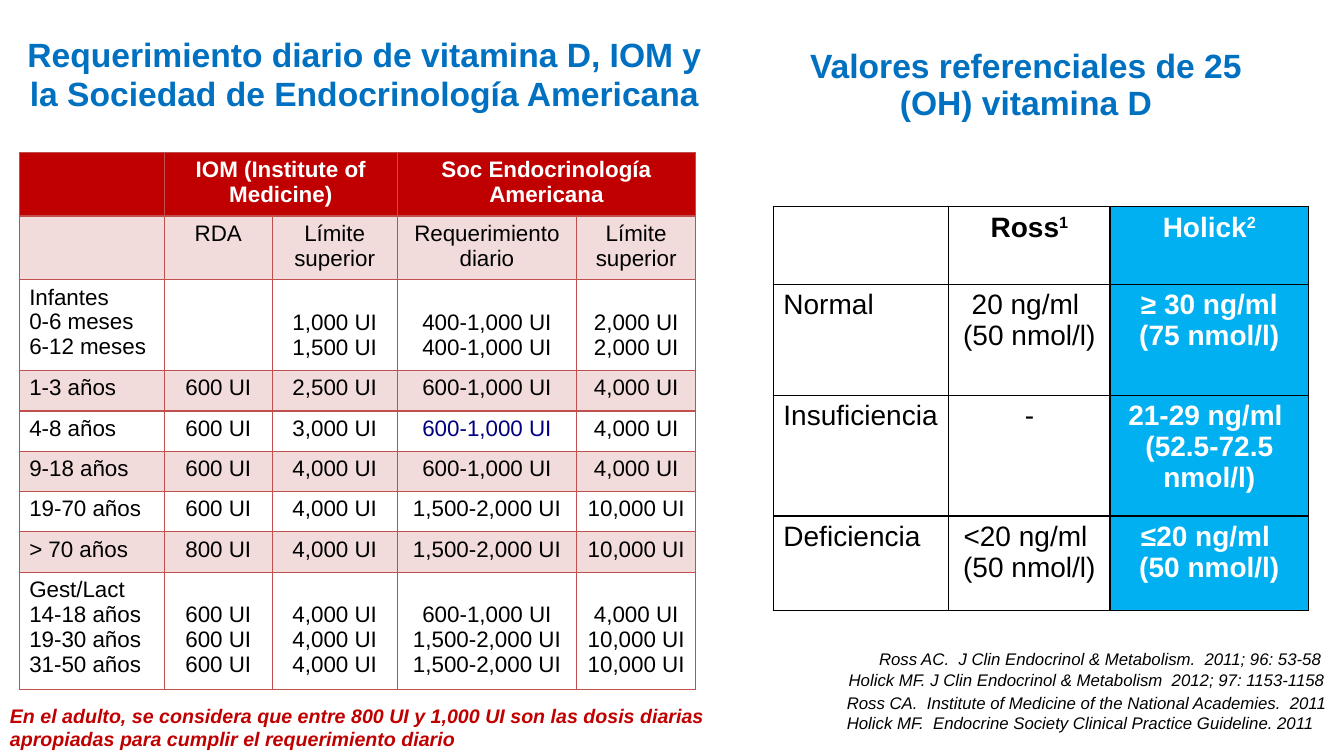
from dataclasses import dataclass
from pptx import Presentation
from pptx.dml.color import RGBColor as Rgb
from pptx.enum.text import MSO_ANCHOR as Anchor, MSO_AUTO_SIZE as Fit, PP_ALIGN as Align
from pptx.oxml import parse_xml
from pptx.oxml.ns import nsdecls
from pptx.util import Pt


@dataclass(frozen=True)
class Theme:
    font: str = "Arial"
    head: str = "0070C0"
    red: str = "C00000"
    rose: str = "C0504D"
    sky: str = "00B0F0"
    navy: str = "000080"
    ink: str = "000000"
    white: str = "FFFFFF"
    title: int = 24
    dose: int = 16
    level: int = 20
    note: int = 14
    cite: int = 12


look = Theme()
SCALE = 9144
BAND = 20

DOSE_COLS = [144, 107, 124, 178, 118]
DOSE_ROWS = [59, 63, 89, 40, 40, 40, 40, 40, 116]
DOSES = [
    ["", "IOM (Institute of Medicine)", "", "Soc Endocrinología Americana", ""],
    ["", "RDA", "Límite superior", "Requerimiento diario", "Límite superior"],
    ["Infantes\n0-6 meses\n6-12 meses", "", "1,000 UI\n1,500 UI",
     "400-1,000 UI\n400-1,000 UI", "2,000 UI\n2,000 UI"],
    ["1-3 años", "600 UI", "2,500 UI", "600-1,000 UI", "4,000 UI"],
    ["4-8 años", "600 UI", "3,000 UI", "600-1,000 UI", "4,000 UI"],
    ["9-18 años", "600 UI", "4,000 UI", "600-1,000 UI", "4,000 UI"],
    ["19-70 años", "600 UI", "4,000 UI", "1,500-2,000 UI", "10,000 UI"],
    ["> 70 años", "800 UI", "4,000 UI", "1,500-2,000 UI", "10,000 UI"],
    ["Gest/Lact\n14-18 años\n19-30 años\n31-50 años", "600 UI\n600 UI\n600 UI",
     "4,000 UI\n4,000 UI\n4,000 UI", "600-1,000 UI\n1,500-2,000 UI\n1,500-2,000 UI",
     "4,000 UI\n10,000 UI\n10,000 UI"],
]
LEVEL_COLS = [174, 160, 197]
LEVEL_ROWS = [77, 110, 120, 94]
LEVELS = [
    ["", "Ross^1", "Holick^2"],
    ["Normal", "20 ng/ml \n(50 nmol/l)", "≥ 30 ng/ml\n(75 nmol/l)"],
    ["Insuficiencia", "-", "21-29 ng/ml \n(52.5-72.5 nmol/l)"],
    ["Deficiencia", "<20 ng/ml \n(50 nmol/l)", "≤20 ng/ml \n(50 nmol/l)"],
]


def px(n):
    return n * SCALE


def write(frame, text, size, color=look.ink, bold=False, slant=False,
          align=Align.LEFT, lead=None):
    for i, line in enumerate(text.split("\n")):
        par = frame.add_paragraph() if i else frame.paragraphs[0]
        par.alignment = align
        if lead:
            par.line_spacing = Pt(lead)
        for j, part in enumerate(line.split("^")):
            run = par.add_run()
            run.text = part
            font = run.font
            font.name, font.size = look.font, Pt(size)
            font.bold, font.italic = bold, slant
            font.color.rgb = Rgb.from_string(color)
            if j:
                run._r.get_or_add_rPr().set("baseline", "30000")


def place(shape, box):
    shape.left, shape.top, shape.width, shape.height = map(px, box)


def label(slide, box, text, size, **form):
    shape = slide.shapes.add_textbox(*map(px, box))
    shape.text_frame.word_wrap = True
    shape.text_frame.auto_size = Fit.SHAPE_TO_FIT_TEXT
    write(shape.text_frame, text, size, **form)


def paint(cell, color, alpha=100):
    if not color:
        cell.fill.background()
        return
    cell.fill.solid()
    cell.fill.fore_color.rgb = Rgb.from_string(color)
    if alpha < 100:
        tone = cell._tc.tcPr.find(".//{*}srgbClr")
        tone.append(parse_xml(f'<a:alpha {nsdecls("a")} val="{alpha * 1000}"/>'))


def edge(cell, color, base=1):
    props = cell._tc.get_or_add_tcPr()
    widths = {"lnL": 1, "lnR": 1, "lnT": 1, "lnB": base}
    for i, (side, width) in enumerate(widths.items()):
        props.insert(i, parse_xml(
            f'<a:{side} {nsdecls("a")} w="{Pt(width)}"><a:solidFill>'
            f'<a:srgbClr val="{color}"/></a:solidFill></a:{side}>'))


def grid(slide, left, top, cols, rows):
    box = (left, top, sum(cols), sum(rows))
    table = slide.shapes.add_table(len(rows), len(cols), *map(px, box)).table
    table.first_row = table.horz_banding = False
    for col, width in zip(table.columns, cols):
        col.width = px(width)
    for row, height in zip(table.rows, rows):
        row.height = px(height)
    return table


def doses(slide, left, top):
    table = grid(slide, left, top, DOSE_COLS, DOSE_ROWS)
    for col in (1, 3):
        table.cell(0, col).merge(table.cell(0, col + 1))
    for r, row in enumerate(DOSES):
        for c, text in enumerate(row):
            cell = table.cell(r, c)
            if r == 0:
                paint(cell, look.red)
            else:
                paint(cell, look.rose if r % 2 else None, BAND)
            edge(cell, look.rose, base=1 if r else 2)
            if not text:
                continue
            if c and "\n" in row[0]:
                cell.margin_top = px(30)
            color = look.white if r == 0 else look.navy if (r, c) == (4, 3) else look.ink
            write(cell.text_frame, text, look.dose, color=color, bold=r == 0,
                  align=Align.CENTER if c or r == 0 else Align.LEFT)


def levels(slide, left, top):
    table = grid(slide, left, top, LEVEL_COLS, LEVEL_ROWS)
    for r, row in enumerate(LEVELS):
        for c, text in enumerate(row):
            cell = table.cell(r, c)
            last = c == 2
            paint(cell, look.sky if last else None)
            edge(cell, look.ink)
            if text:
                write(cell.text_frame, text, look.level,
                      color=look.white if last else look.ink, bold=last or r == 0,
                      align=Align.CENTER if c else Align.LEFT)


def intake(slide, left, top):
    title = slide.shapes.title
    place(title, (left, top, 723, 89))
    frame = title.text_frame
    frame.word_wrap, frame.vertical_anchor = True, Anchor.TOP
    frame.auto_size = Fit.SHAPE_TO_FIT_TEXT
    write(frame, "Requerimiento diario de vitamina D, IOM y la Sociedad de Endocrinología Americana",
          look.title, color=look.head, bold=True, align=Align.CENTER, lead=28)
    doses(slide, left + 19, top + 121)
    label(slide, (left, top + 663, 716, 57),
          "En el adulto, se considera que entre 800 UI y 1,000 UI son las dosis diarias "
          "apropiadas para cumplir el requerimiento diario",
          look.note, color=look.red, bold=True, slant=True)


def values(slide, left, top):
    label(slide, (left, top, 517, 84), "Valores referenciales de 25 (OH) vitamina D",
          look.title, color=look.head, bold=True, align=Align.CENTER, lead=26.4)
    levels(slide, left + 8, top + 162)
    cites = [
        ((103, 596, 500, 30), Align.LEFT,
         "Ross AC.  J Clin Endocrinol & Metabolism.  2011; 96: 53-58"),
        ((41, 617, 524, 30), Align.RIGHT,
         "Holick MF. J Clin Endocrinol & Metabolism  2012; 97: 1153-1158"),
        ((71, 639, 498, 50), Align.LEFT,
         "Ross CA.  Institute of Medicine of the National Academies.  2011\n"
         "Holick MF.  Endocrine Society Clinical Practice Guideline. 2011"),
    ]
    for (x, y, w, h), align, text in cites:
        label(slide, (left + x, top + y, w, h), text, look.cite, slant=True, align=align)


def main():
    deck = Presentation()
    deck.slide_width, deck.slide_height = px(1333), px(750)
    slide = deck.slides.add_slide(deck.slide_layouts[5])
    intake(slide, 0, 30)
    values(slide, 759, 43)
    deck.save("out.pptx")


if __name__ == "__main__":
    main()
